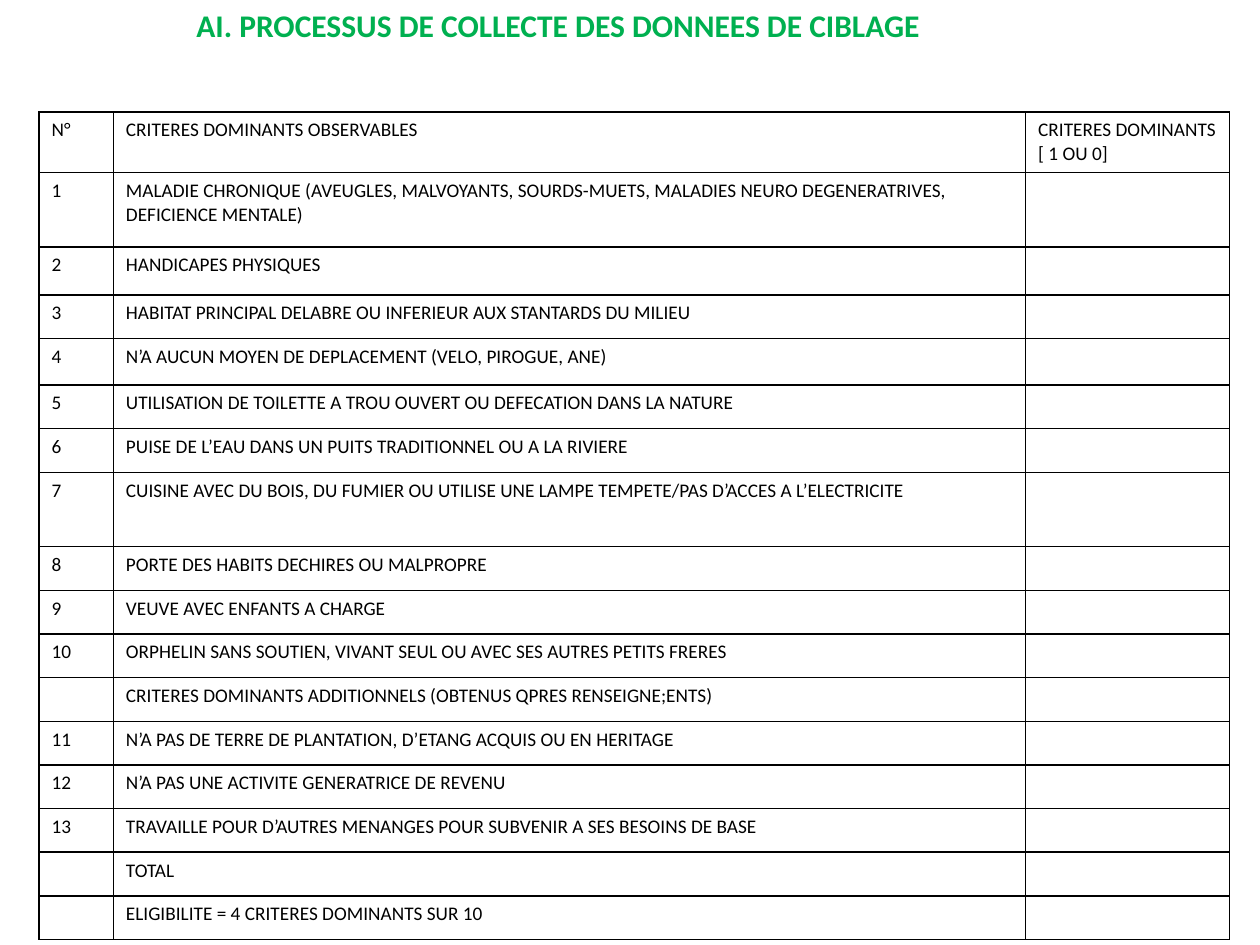
import pptx
import pptx.dml.color
import pptx.oxml.ns
import pptx.util
from lxml import etree

GREEN = pptx.dml.color.RGBColor(0x00, 0xB0, 0x50)
BLACK = pptx.dml.color.RGBColor(0x00, 0x00, 0x00)
FONT = "Calibri"
CRITERIA_SIZE = 11
BORDER_WIDTH = 1

TITLE = "AI. PROCESSUS DE COLLECTE DES DONNEES DE CIBLAGE"
HEADER = ("N°", "CRITERES DOMINANTS OBSERVABLES", "CRITERES DOMINANTS\n[ 1 OU 0]")
CRITERIA = [
    ("1", "MALADIE CHRONIQUE (AVEUGLES, MALVOYANTS, SOURDS-MUETS, MALADIES NEURO DEGENERATRIVES, DEFICIENCE MENTALE)"),
    ("2", "HANDICAPES PHYSIQUES"),
    ("3", "HABITAT PRINCIPAL DELABRE OU INFERIEUR AUX STANTARDS DU MILIEU"),
    ("4", "N’A AUCUN MOYEN DE DEPLACEMENT (VELO, PIROGUE, ANE)"),
    ("5", "UTILISATION DE TOILETTE A TROU OUVERT OU DEFECATION DANS LA NATURE"),
    ("6", "PUISE DE L’EAU DANS UN PUITS TRADITIONNEL OU A LA RIVIERE"),
    ("7", "CUISINE AVEC DU BOIS, DU FUMIER OU UTILISE UNE LAMPE TEMPETE/PAS D’ACCES A L’ELECTRICITE"),
    ("8", "PORTE DES HABITS DECHIRES OU MALPROPRE"),
    ("9", "VEUVE AVEC ENFANTS A CHARGE"),
    ("10", "ORPHELIN SANS SOUTIEN, VIVANT SEUL OU AVEC SES AUTRES PETITS FRERES"),
    ("", "CRITERES DOMINANTS ADDITIONNELS (OBTENUS QPRES RENSEIGNE;ENTS)"),
    ("11", "N’A PAS DE TERRE DE PLANTATION, D’ETANG ACQUIS OU EN HERITAGE"),
    ("12", "N’A PAS UNE ACTIVITE GENERATRICE DE REVENU"),
    ("13", "TRAVAILLE POUR D’AUTRES MENANGES POUR SUBVENIR A SES BESOINS DE BASE"),
    ("", "TOTAL"),
    ("", "ELIGIBILITE = 4 CRITERES DOMINANTS SUR 10"),
]
COLUMN_WIDTHS = (0.59, 7.24, 1.62)
TABLE_HEIGHT = 6.57
SPECIAL_HEIGHTS = {0: 0.48, 1: 0.59, 2: 0.38, 4: 0.37, 7: 0.59}


def add_text(paragraph, text, size, color, bold=False):
    run = paragraph.add_run()
    run.text = text
    run.font.name = FONT
    run.font.size = pptx.util.Pt(size)
    run.font.bold = bold
    run.font.color.rgb = color


def add_borders(cell):
    properties = cell._tc.get_or_add_tcPr()
    for side in ("a:lnL", "a:lnR", "a:lnT", "a:lnB"):
        line = etree.SubElement(properties, pptx.oxml.ns.qn(side), w=str(pptx.util.Pt(BORDER_WIDTH)))
        fill = etree.SubElement(line, pptx.oxml.ns.qn("a:solidFill"))
        etree.SubElement(fill, pptx.oxml.ns.qn("a:srgbClr"), val=str(BLACK))


def fill_cell(cell, text):
    add_borders(cell)
    cell.fill.background()
    frame = cell.text_frame
    if not text:
        etree.SubElement(frame.paragraphs[0]._p, pptx.oxml.ns.qn("a:endParaRPr"), sz=str(CRITERIA_SIZE * 100))
        return
    for index, line in enumerate(text.split("\n")):
        paragraph = frame.add_paragraph() if index else frame.paragraphs[0]
        add_text(paragraph, line, CRITERIA_SIZE, BLACK)


def add_criteria_table(slide):
    rows = [HEADER] + [(number, criterion, "") for number, criterion in CRITERIA]
    shared_height = TABLE_HEIGHT - sum(SPECIAL_HEIGHTS.values())
    row_height = shared_height / (len(rows) - len(SPECIAL_HEIGHTS))
    area = [pptx.util.Inches(v) for v in (0.31, 0.89, sum(COLUMN_WIDTHS), TABLE_HEIGHT)]
    table = slide.shapes.add_table(len(rows), len(COLUMN_WIDTHS), *area).table
    table.first_row = table.horz_banding = False
    for column, width in zip(table.columns, COLUMN_WIDTHS):
        column.width = pptx.util.Inches(width)
    for index, (row, texts) in enumerate(zip(table.rows, rows)):
        row.height = pptx.util.Inches(SPECIAL_HEIGHTS.get(index, row_height))
        for cell, text in zip(row.cells, texts):
            fill_cell(cell, text)


def add_title(slide):
    area = [pptx.util.Inches(v) for v in (1.46, 0, 7.01, 0.4)]
    frame = slide.shapes.add_textbox(*area).text_frame
    frame.word_wrap = True
    add_text(frame.paragraphs[0], TITLE, 18, GREEN, bold=True)


def main():
    deck = pptx.Presentation()
    deck.slide_width = pptx.util.Inches(10)
    deck.slide_height = pptx.util.Inches(7.5)
    slide = deck.slides.add_slide(deck.slide_layouts[6])
    add_criteria_table(slide)
    add_title(slide)
    deck.save("out.pptx")


if __name__ == "__main__":
    main()
